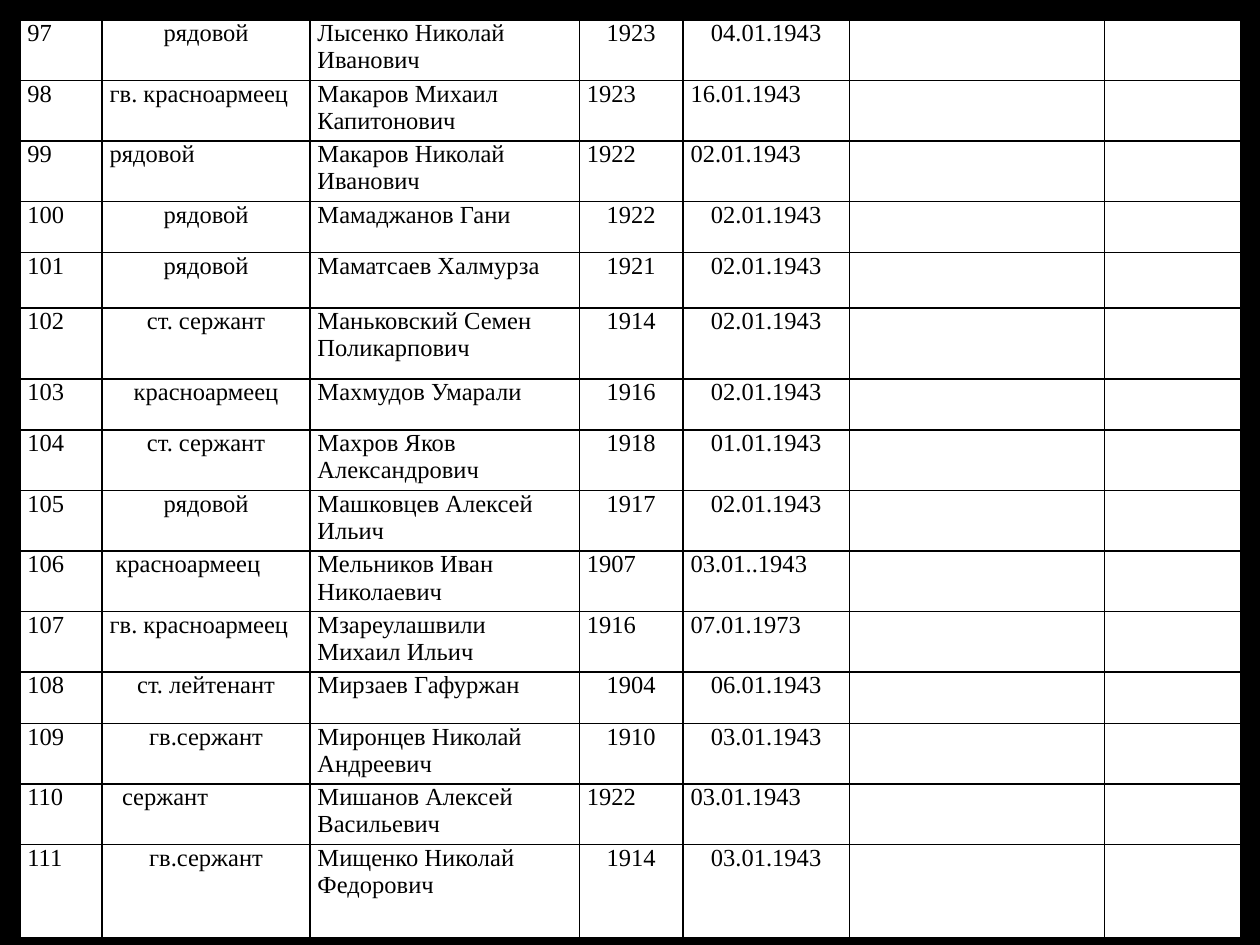
from lxml.etree import SubElement
from pptx import Presentation
from pptx.dml.color import RGBColor
from pptx.enum.text import PP_ALIGN
from pptx.oxml.ns import qn
from pptx.util import Cm, Pt


def color(value):
    return RGBColor.from_string(value)


def add_borders(cell, value, width):
    properties = cell._tc.get_or_add_tcPr()
    for side in ("a:lnL", "a:lnR", "a:lnT", "a:lnB"):
        line = SubElement(properties, qn(side), w=str(width))
        fill = SubElement(line, qn("a:solidFill"))
        SubElement(fill, qn("a:srgbClr"), val=value)


first_number = 97
left_aligned = {98, 99, 106, 107, 110}
rank_indents = {106: 0.12, 110: 0.25}
column_widths = [1.66, 4.19, 5.43, 2.09, 3.35, 5.15, 2.74]
centered_columns = {1, 3, 4}
soldiers = [
    ("рядовой", "Лысенко Николай Иванович", "1923", "04.01.1943", 1.22),
    ("гв. красноармеец", "Макаров Михаил Капитонович", "1923", "16.01.1943", 1.22),
    ("рядовой", "Макаров Николай Иванович", "1922", "02.01.1943", 1.22),
    ("рядовой", "Мамаджанов Гани", "1922", "02.01.1943", 0.94),
    ("рядовой", "Маматсаев Халмурза", "1921", "02.01.1943", 1.12),
    ("ст. сержант", "Маньковский Семен Поликарпович", "1914", "02.01.1943", 1.43),
    ("красноармеец", "Махмудов Умарали", "1916", "02.01.1943", 0.94),
    ("ст. сержант", "Махров Яков Александрович", "1918", "01.01.1943", 1.22),
    ("рядовой", "Машковцев Алексей Ильич", "1917", "02.01.1943", 1.22),
    ("красноармеец", "Мельников Иван Николаевич", "1907", "03.01..1943", 1.22),
    ("гв. красноармеец", "Мзареулашвили Михаил Ильич", "1916", "07.01.1973", 1.22),
    ("ст. лейтенант", "Мирзаев Гафуржан", "1904", "06.01.1943", 0.94),
    ("гв.сержант", "Миронцев Николай Андреевич", "1910", "03.01.1943", 1.22),
    ("сержант", "Мишанов Алексей Васильевич", "1922", "03.01.1943", 1.22),
    ("гв.сержант", "Мищенко Николай Федорович", "1914", "03.01.1943", 1.88),
]

deck = Presentation()
deck.slide_width = Cm(25.4)
deck.slide_height = Cm(19.05)
page = deck.slides.add_slide(deck.slide_layouts[6])
page.background.fill.solid()
page.background.fill.fore_color.rgb = color("000000")

frame = page.shapes.add_table(
    len(soldiers), len(column_widths), Cm(0.4), Cm(0.4),
    Cm(sum(column_widths)), Cm(sum(soldier[-1] for soldier in soldiers)))
table = frame.table
table.first_row = False
table.horz_banding = False
for column, width in zip(table.columns, column_widths):
    column.width = Cm(width)

for number, (row, soldier) in enumerate(zip(table.rows, soldiers), first_number):
    *details, height = soldier
    row.height = Cm(height)
    texts = [str(number), *details, "", ""]
    for index, (cell, text) in enumerate(zip(row.cells, texts)):
        add_borders(cell, "000000", Pt(1))
        cell.fill.solid()
        cell.fill.fore_color.rgb = color("FFFFFF")
        if not text:
            continue
        cell.margin_left = cell.margin_right = Cm(0.15)
        cell.margin_top = cell.margin_bottom = 0
        para = cell.text_frame.paragraphs[0]
        para.text = text
        if index in centered_columns and number not in left_aligned:
            para.alignment = PP_ALIGN.CENTER
        if index == 1 and number in rank_indents:
            para._p.get_or_add_pPr().set("marL", str(Cm(rank_indents[number])))
        span = para.runs[0]
        span.font.name = "Times New Roman"
        span.font.size = Pt(14)
        span.font.color.rgb = color("000000")

deck.save("out.pptx")
